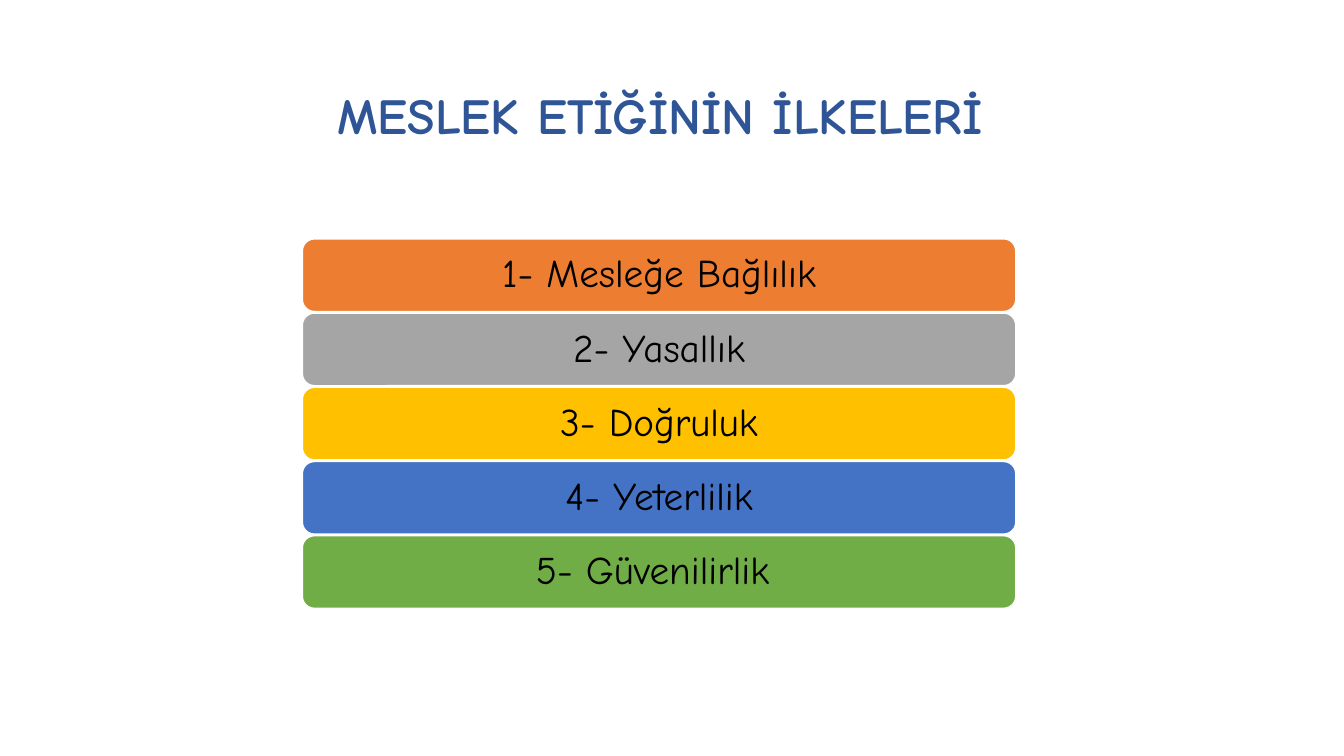
from dataclasses import dataclass

from pptx import Presentation
from pptx.dml.color import RGBColor
from pptx.enum.shapes import MSO_SHAPE
from pptx.enum.text import MSO_ANCHOR, PP_ALIGN
from pptx.slide import Slide
from pptx.util import Cm, Pt

COLOURS = {
    "heading": "2F5597",
    "text": "000000",
    "outline": "FFFFFF",
    "orange": "ED7D31",
    "grey": "A5A5A5",
    "yellow": "FFC000",
    "blue": "4472C4",
    "green": "70AD47",
}
FONT = "Comic Neue"
BAR_LEFT, BAR_WIDTH, BAR_HEIGHT = 7.62, 17.98, 1.83
FIRST_BAR_TOP, BAR_PITCH = 6.02, 1.87


@dataclass(frozen=True)
class Principle:
    label: str
    colour: str


PRINCIPLES = [
    Principle("1- Mesleğe Bağlılık", "orange"),
    Principle("2- Yasallık", "grey"),
    Principle("3- Doğruluk", "yellow"),
    Principle("4- Yeterlilik", "blue"),
    Principle("5- Güvenilirlik ", "green"),
]


def rgb(name: str) -> RGBColor:
    return RGBColor.from_string(COLOURS[name])


def write_centred(shape, text: str, size: int, colour: str, bold: bool = False):
    """Fill the shape with one centred paragraph and return that paragraph."""
    frame = shape.text_frame
    frame.text = text
    frame.word_wrap = True
    frame.vertical_anchor = MSO_ANCHOR.MIDDLE
    paragraph = frame.paragraphs[0]
    paragraph.alignment = PP_ALIGN.CENTER
    paragraph.font.name = FONT
    paragraph.font.size = Pt(size)
    paragraph.font.bold = bold
    paragraph.font.color.rgb = rgb(colour)
    return paragraph


def add_heading(slide: Slide) -> None:
    heading = slide.shapes.title
    heading.left, heading.top = Cm(2.24), Cm(1.42)
    heading.width, heading.height = Cm(28.78), Cm(3.18)
    line = write_centred(heading, "MESLEK ETİĞİNİN İLKELERİ", 36, "heading", bold=True)
    line.line_spacing = Pt(36)


def add_bar(slide: Slide, principle: Principle, top: float) -> None:
    bar = slide.shapes.add_shape(
        MSO_SHAPE.ROUNDED_RECTANGLE,
        Cm(BAR_LEFT), Cm(top), Cm(BAR_WIDTH), Cm(BAR_HEIGHT),
    )
    bar.shadow.inherit = False
    bar.fill.solid()
    bar.fill.fore_color.rgb = rgb(principle.colour)
    bar.line.color.rgb = rgb("outline")
    bar.line.width = Pt(1)
    write_centred(bar, principle.label, 28, "text").line_spacing = 0.9


def main() -> None:
    deck = Presentation()
    deck.slide_width, deck.slide_height = Cm(33.87), Cm(19.05)
    slide = deck.slides.add_slide(deck.slide_layouts.get_by_name("Title Only"))
    add_heading(slide)
    for row, principle in enumerate(PRINCIPLES):
        add_bar(slide, principle, FIRST_BAR_TOP + row * BAR_PITCH)
    deck.save("out.pptx")


if __name__ == "__main__":
    main()
